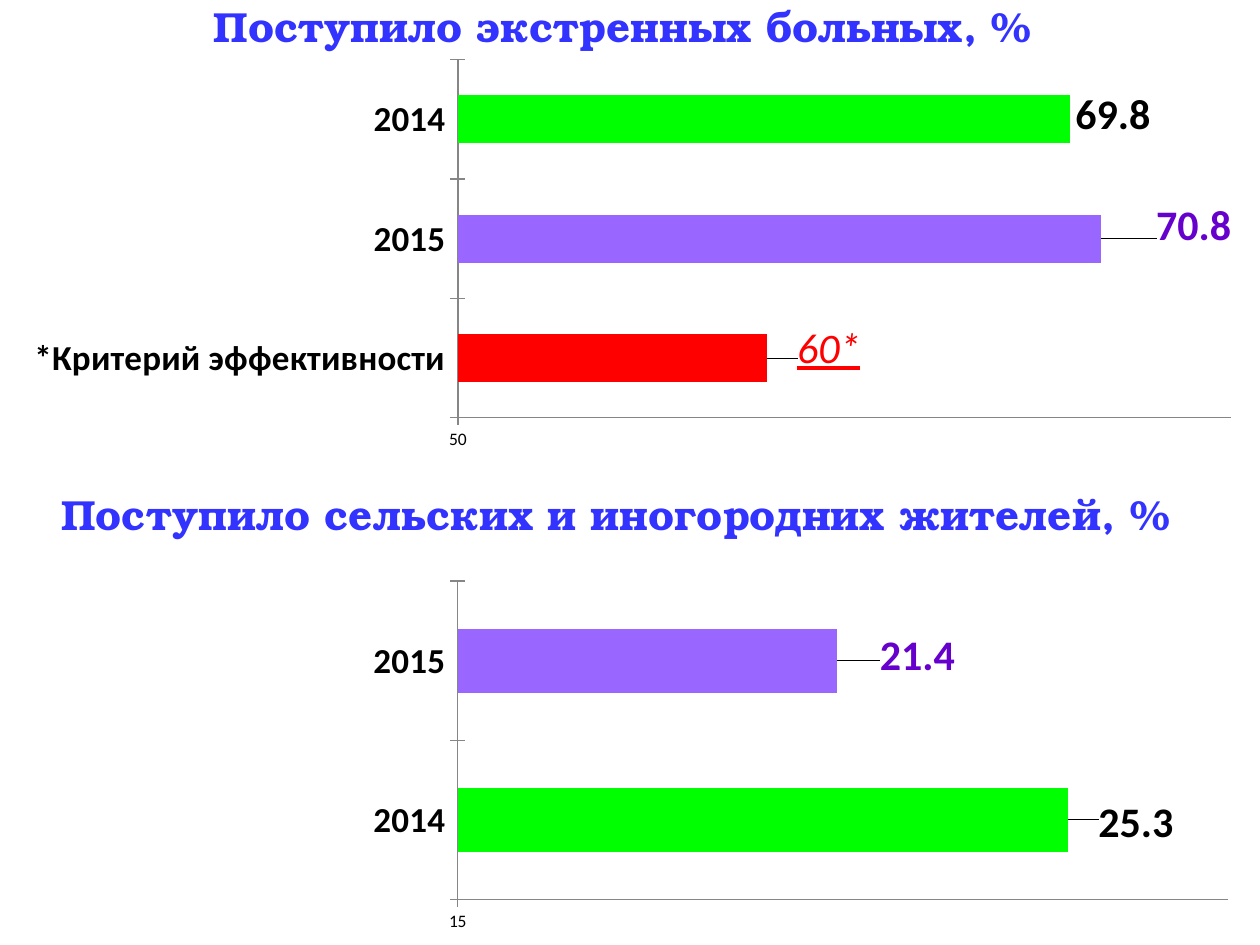
from lxml import etree
from pptx import Presentation
from pptx.chart.data import CategoryChartData
from pptx.dml.color import RGBColor
from pptx.enum import chart as ch, text
from pptx.oxml import ns
from pptx.util import Inches, Pt

THEME = {
    "head": "TeX Gyre Bonum", "body": "Calibri",
    "title": 24, "label": 24, "cat": 20, "base": 18, "tick": 10,
    "blue": "3333FF", "green": "00FF00", "violet": "9966FF", "red": "FF0000",
    "purple": "6600CC", "black": "000000", "grey": "868686", "bar": "4F81BD",
}

# Box: left, top, width, height in inches. Plot: x, y, w, h as chart fractions.
# Bar: category, value, fill, label colour, label shift (x, y), own label text.
HEADS = [
    ("Поступило экстренных больных, %", (0, 0, 9.88, 0.83), 0.9),
    ("Поступило сельских и иногородних жителей, % ", (0, 3.83, 9.88, 0.5), 1),
]
CHARTS = [
    {"box": (0, 4.46, 9.98, 3.03), "plot": (0.364, 0.05, 0.613, 0.835),
     "scale": (15, 28, 30),
     "bars": [("2014", 25.3, "green", "black", (0.02, 0.01), None),
              ("2015", 21.4, "violet", "purple", (0.03, -0.01), None)]},
    {"box": (0.07, 0.41, 9.9, 3.23), "plot": (0.36, 0.02, 0.62, 0.88),
     "scale": (50, 75, 110),
     "bars": [("*Критерий эффективности", 60, "red", "red", (0.02, -0.02), "60*"),
              ("2015", 70.8, "violet", "purple", (0.04, -0.03), None),
              ("2014", 69.8, "green", "black", (0, -0.01), None)]},
]


def rgb(name):
    return RGBColor.from_string(THEME[name])


def style(font, size, color="black", bold=False, face="body"):
    font.name, font.size, font.bold = THEME[face], Pt(THEME[size]), bold
    font.color.rgb = rgb(color)


def layout(**vals):
    """Manual chart layout element."""
    root = etree.Element(ns.qn("c:layout"))
    part = etree.SubElement(root, ns.qn("c:manualLayout"))
    for tag, val in vals.items():
        etree.SubElement(part, ns.qn("c:" + tag)).set("val", str(val))
    return root


def set_head(shape, words, box, gap):
    shape.left, shape.top, shape.width, shape.height = map(Inches, box)
    frame = shape.text_frame
    frame.text = words
    frame.word_wrap = True
    frame.auto_size = text.MSO_AUTO_SIZE.NONE
    frame.vertical_anchor = text.MSO_ANCHOR.TOP
    para = frame.paragraphs[0]
    para.alignment, para.line_spacing = text.PP_ALIGN.CENTER, gap
    style(para.runs[0].font, "title", "blue", True, "head")


def set_axes(chart, scale):
    cat, val = chart.category_axis, chart.value_axis
    for axis, size, bold in ((cat, "cat", True), (val, "tick", False)):
        axis.major_tick_mark = ch.XL_TICK_MARK.CROSS
        axis.minor_tick_mark = ch.XL_TICK_MARK.NONE
        axis.format.line.color.rgb = rgb("grey")
        axis.format.line.width = Pt(0.75)
        style(axis.tick_labels.font, size, bold=bold)
    val.minimum_scale, val.maximum_scale, val.major_unit = scale
    val.has_major_gridlines = True
    val.major_gridlines.format.line.color.rgb = rgb("grey")


def set_bar(point, fill, color, shift, words):
    point.format.fill.solid()
    point.format.fill.fore_color.rgb = rgb(fill)
    label = point.data_label
    if words:
        label.text_frame.text = words
        font = label.text_frame.paragraphs[0].runs[0].font
        font.italic = font.underline = True
    else:
        font = label.font
    style(font, "label", color, not words)
    label.position = ch.XL_LABEL_POSITION.OUTSIDE_END
    return layout(x=shift[0], y=shift[1])


def add_bars(slide, box, plot, scale, bars):
    data = CategoryChartData()
    data.categories = [bar[0] for bar in bars]
    data.add_series("Series 1", [bar[1] for bar in bars])
    chart = slide.shapes.add_chart(
        ch.XL_CHART_TYPE.BAR_CLUSTERED, *map(Inches, box), data).chart
    chart.has_legend = chart.has_title = False
    style(chart.font, "base")
    set_axes(chart, scale)

    group = chart.plots[0]
    group.gap_width, group.vary_by_categories = 150, False
    series = group.series[0]
    series.format.fill.solid()
    series.format.fill.fore_color.rgb = rgb("bar")
    labels = series.data_labels
    labels.show_value = True
    style(labels.font, "label", bold=True)
    moves = [set_bar(series.points[i], *bar[2:]) for i, bar in enumerate(bars)]
    for mark, move in zip(labels._element.findall(ns.qn("c:dLbl")), moves):
        mark.find(ns.qn("c:idx")).addnext(move)

    area = chart._chartSpace.chart.plotArea
    for old in area.findall(ns.qn("c:layout")):
        area.remove(old)
    x, y, w, h = plot
    area.insert(0, layout(layoutTarget="inner", xMode="edge", yMode="edge",
                          x=x, y=y, w=w, h=h))


def main():
    deck = Presentation()
    deck.slide_width, deck.slide_height = Inches(10), Inches(7.5)
    slide = deck.slides.add_slide(deck.slide_layouts[5])
    second = slide.shapes.add_textbox(0, 0, 0, 0)
    for shape, head in zip((slide.shapes.title, second), HEADS):
        set_head(shape, *head)
    for item in CHARTS:
        add_bars(slide, **item)
    deck.save("out.pptx")


if __name__ == "__main__":
    main()
